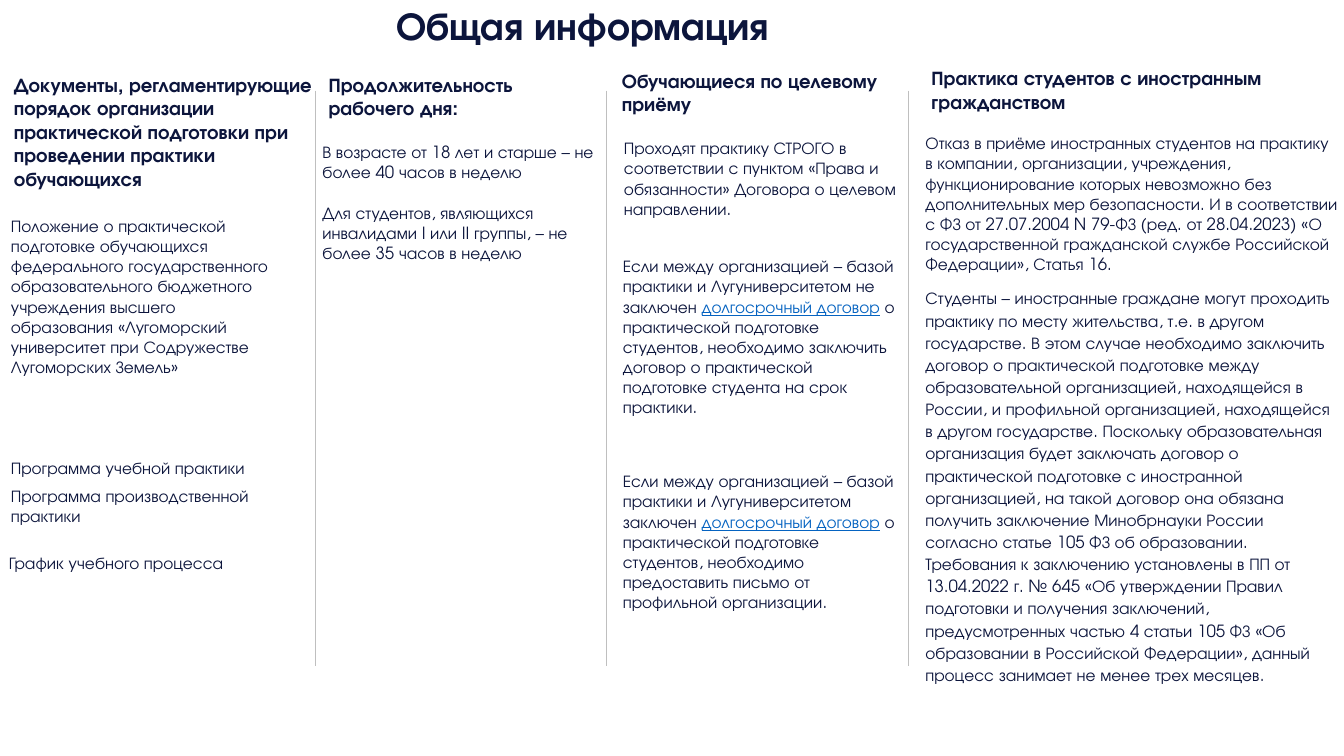
from lxml import etree
from pptx import Presentation
from pptx import util as u
from pptx.dml import color
from pptx.enum import shapes, text
from pptx.oxml import ns

NAVY = color.RGBColor(0x0C, 0x15, 0x3C)
LINK_BLUE = color.RGBColor(0x05, 0x63, 0xC1)
RULE_GREY = color.RGBColor(0xBF, 0xBF, 0xBF)
FONT = "TeX Gyre Adventor"

# Left edge of each column; a rule stands at every edge but the first
COLUMNS = [0, 3.13, 6.01, 9.01]
RULE_TOP, RULE_BOTTOM = 0.9, 6.61

deck = Presentation()
deck.slide_width, deck.slide_height = u.Inches(13.33), u.Inches(7.5)
page = deck.slides.add_slide(deck.slide_layouts[6])


def add_text(left, top, width, height, paragraphs, size=12, bold=False, gap=0, spacing=1.0):
    """Add a text box; parts between bars are set as links."""
    box = page.shapes.add_textbox(*(u.Inches(n) for n in (left, top, width, height)))
    frame = box.text_frame
    frame.word_wrap = True
    frame.vertical_anchor = text.MSO_ANCHOR.TOP
    for index, wording in enumerate(paragraphs):
        para = frame.paragraphs[0] if index == 0 else frame.add_paragraph()
        para.alignment = text.PP_ALIGN.LEFT
        para.line_spacing = spacing
        para.space_after = u.Pt(gap)
        para.font.name, para.font.size, para.font.bold = FONT, u.Pt(size), bold
        para.font.color.rgb = NAVY
        for part, words in enumerate(wording.split("|")):
            span = para.add_run()
            span.text = words
            if part % 2:
                span.font.color.rgb = LINK_BLUE
                span.font.underline = True


# Column rules
for x in COLUMNS[1:]:
    rule = page.shapes.add_connector(
        shapes.MSO_CONNECTOR.STRAIGHT,
        u.Inches(x), u.Inches(RULE_TOP), u.Inches(x), u.Inches(RULE_BOTTOM))
    rule.line.color.rgb = RULE_GREY
    rule.line.width = u.Pt(0.5)
    etree.SubElement(rule._element.spPr, ns.qn("a:effectLst"))

# Title
add_text(3.83, 0.02, 5.78, 0.54, ["Общая информация"], size=28, bold=True, spacing=0.9)

# Column headings: offset from the column edge, top, width, height, wording
headings = [
    (0.04, 0.67, 3.3, 1.28, "Документы, регламентирующие порядок организации практической "
                            "подготовки при проведении практики обучающихся"),
    (0.03, 0.67, 2.82, 0.57, "Продолжительность рабочего дня:"),
    (0.06, 0.63, 3.07, 0.57, "Обучающиеся по целевому приёму"),
    (0.13, 0.61, 3.51, 0.57, "Практика студентов с иностранным гражданством"),
]
for edge, (offset, top, width, height, wording) in zip(COLUMNS, headings):
    add_text(edge + offset, top, width, height, [wording], size=14, bold=True)

documents, hours, targeted, foreign = COLUMNS

# Documents
add_text(documents + 0.01, 2.09, 2.85, 2.12, [
    "Положение о практической подготовке обучающихся федерального государственного "
    "образовательного бюджетного учреждения высшего образования «Лугоморский университет "
    "при Содружестве Лугоморских Земель»"])
add_text(documents + 0.01, 4.49, 2.93, 0.79, [
    "Программа учебной практики", "Программа производственной практики"], gap=5.5)
add_text(documents - 0.01, 5.43, 2.93, 0.59, ["График учебного процесса"])

# Working hours
add_text(hours - 0.03, 1.36, 2.93, 1.31, [
    "В возрасте от 18 лет и старше – не более 40 часов в неделю",
    "Для студентов, являющихся инвалидами I или II группы, – не более 35 часов в неделю",
], gap=14.4)

# Targeted admission
add_text(targeted + 0.08, 1.32, 2.93, 0.91, [
    "Проходят практику СТРОГО в соответствии с пунктом «Права и обязанности» "
    "Договора о целевом направлении."])
add_text(targeted + 0.07, 2.49, 2.93, 4.85, [
    "Если между организацией – базой практики и Лугуниверситетом не заключен "
    "|долгосрочный договор| о практической подготовке студентов, необходимо заключить "
    "договор о практической подготовке студента на срок практики.",
    "Если между организацией – базой практики и Лугуниверситетом заключен "
    "|долгосрочный договор| о практической подготовке студентов, необходимо предоставить "
    "письмо от профильной организации.",
], gap=38.4)

# Foreign students
add_text(foreign + 0.07, 1.27, 4.32, 1.88, [
    "Отказ в приёме иностранных студентов на практику в компании, организации, учреждения, "
    "функционирование которых невозможно без дополнительных мер безопасности. И в соответствии "
    "с ФЗ от 27.07.2004 N 79-ФЗ (ред. от 28.04.2023) «О государственной гражданской службе "
    "Российской Федерации», Статья 16."])
add_text(foreign + 0.07, 2.79, 4.24, 4.54, [
    "Студенты – иностранные граждане могут проходить практику по месту жительства, т.е. в другом "
    "государстве. В этом случае необходимо заключить договор о практической подготовке между "
    "образовательной организацией, находящейся в России, и профильной организацией, находящейся "
    "в другом государстве. Поскольку образовательная организация будет заключать договор о "
    "практической подготовке с иностранной организацией, на такой договор она обязана получить "
    "заключение Минобрнауки России согласно статье 105 ФЗ об образовании. Требования к заключению "
    "установлены в ПП от 13.04.2022 г. № 645 «Об утверждении Правил подготовки и получения "
    "заключений, предусмотренных частью 4 статьи 105 ФЗ «Об образовании в Российской Федерации», "
    "данный процесс занимает не менее трех месяцев."], spacing=1.1)

deck.save("out.pptx")
